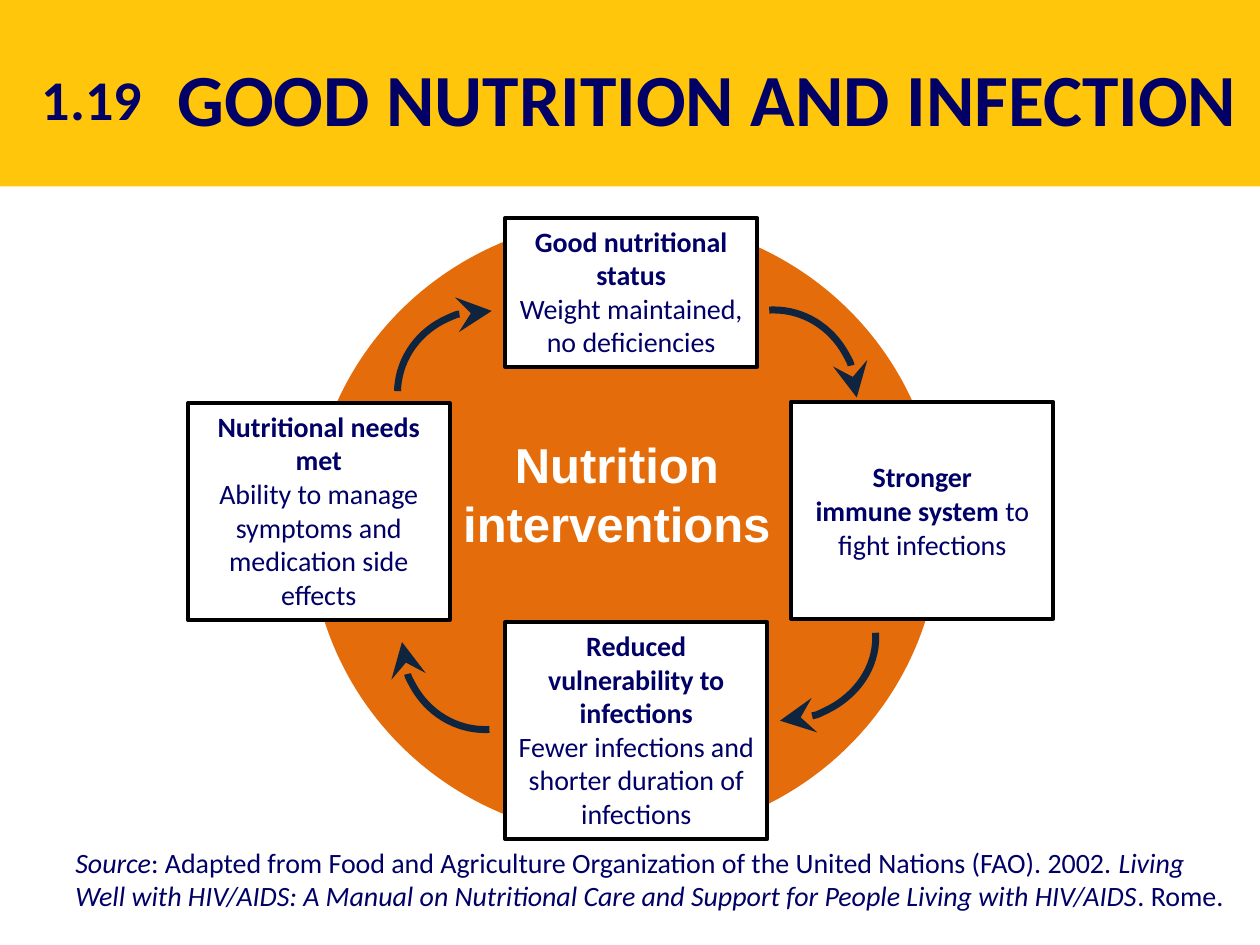
from lxml.etree import SubElement
from pptx import Presentation
from pptx.dml.color import RGBColor
from pptx.enum.shapes import MSO_SHAPE as Shape
from pptx.enum.text import MSO_ANCHOR as Anchor, PP_ALIGN as Align
from pptx.oxml.ns import qn
from pptx.util import Inches, Pt

# The slide is a grid of 100 columns by 75 rows
COLUMNS, ROWS = 100, 75
CELL = Inches(0.1)

NAVY, INK, BLACK, WHITE = "000066", "0F243E", "000000", "FFFFFF"
YELLOW, ORANGE = "FFC60B", "E46C0A"

# Place, anchor and (bold, plain) paragraphs of each stage in the cycle
STAGES = [
    ((40.1, 17.3, 20, 11.8), Anchor.TOP,
     [[("Good nutritional status", "b")],
      [("Weight maintained, no deficiencies", "")]]),
    ((40.1, 49.4, 20.8, 17.2), Anchor.TOP,
     [[("Reduced vulnerability to infections", "b")],
      [("Fewer infections and shorter duration of infections", "")]]),
    ((14.9, 32, 20.8, 17.2), Anchor.TOP,
     [[("Nutritional needs met", "b")],
      [("Ability to manage symptoms and medication side effects", "")]]),
    ((62.8, 31.9, 20.8, 17.2), Anchor.MIDDLE,
     [[("Stronger\vimmune system ", "b"), ("to fight infections", "")]]),
]

# Place and rotation of each arc
ARROWS = [
    ((54.8, 24.6, 13.2, 13.9), 0),
    ((31.9, 24.3, 13.2, 13.9), 274.6),
    ((31.9, 44, 13.2, 13.9), 180),
    ((55.3, 43, 13.2, 15.2), 90),
]

SOURCE = [
    ("Source", "i"),
    (": Adapted from Food and Agriculture Organization of the United Nations "
     "(FAO). 2002. ", ""),
    ("Living Well with HIV/AIDS: A Manual on Nutritional Care and Support for "
     "People Living with HIV/AIDS", "i"),
    (". Rome.", ""),
]


def color(hex_text):
    return RGBColor.from_string(hex_text)


def grid(place):
    return [round(cells * CELL) for cells in place]


def add_figure(page, kind, place, fill=None, line=None, width=0):
    figure = page.shapes.add_shape(kind, *grid(place))
    figure.shadow.inherit = False
    if fill:
        figure.fill.solid()
        figure.fill.fore_color.rgb = color(fill)
    else:
        figure.fill.background()
    if line:
        figure.line.color.rgb = color(line)
        figure.line.width = Pt(width)
    else:
        figure.line.fill.background()
    return figure


def write(box, paragraphs, size, align=Align.CENTER, ink=NAVY, face="Calibri",
          anchor=Anchor.TOP, wrap=True):
    """Fill a box with paragraphs of (text, style) spans; style is b, i or empty."""
    frame = box.text_frame
    frame.word_wrap = wrap
    frame.vertical_anchor = anchor
    for index, spans in enumerate(paragraphs):
        para = frame.add_paragraph() if index else frame.paragraphs[0]
        para.text = "".join(text for text, _ in spans) if len(spans) == 1 else ""
        para.alignment = align
        if len(spans) > 1:
            for text, style in spans:
                add_span(para, text, style)
        else:
            set_style(para.runs[0], spans[0][1])
        for span in para.runs:
            span.font.size = Pt(size)
            span.font.name = face
            span.font.color.rgb = color(ink)


def set_style(span, style):
    span.font.bold = style == "b"
    span.font.italic = style == "i"


def add_span(para, text, style):
    for index, part in enumerate(text.split("\v")):
        if index:
            para.add_line_break()
        span = para.add_run()
        span.text = part
        set_style(span, style)


def add_label(page, place, spans, size, **options):
    box = page.shapes.add_textbox(*grid(place))
    write(box, [spans], size, **options)
    return box


def add_stage(page, place, anchor, paragraphs):
    box = add_figure(page, Shape.RECTANGLE, place, WHITE, BLACK, 2.25)
    write(box, paragraphs, 16, anchor=anchor)


def add_arrow(page, place, rotation):
    arc = add_figure(page, Shape.ARC, place, line=INK, width=4)
    arc.adjustments[0] = 160.29
    arc.rotation = rotation
    SubElement(arc.line._get_or_add_ln(), qn("a:tailEnd"),
               type="stealth", w="lg", len="lg")


def main():
    deck = Presentation()
    deck.slide_width, deck.slide_height = COLUMNS * CELL, ROWS * CELL
    page = deck.slides.add_slide(deck.slide_layouts[6])

    # Title band
    add_figure(page, Shape.RECTANGLE, (0, 0, COLUMNS, 14.8), YELLOW)
    add_label(page, (13.1, 3.7, 86.1, 6), [("GOOD NUTRITION AND INFECTION", "b")],
              42, align=Align.LEFT)
    add_label(page, (2.3, 4.6, 10, 6.4), [("1.19", "b")], 32, wrap=False)

    # Cycle of stages around the circle
    add_figure(page, Shape.OVAL, (24.6, 17.3, 50, 49.2), ORANGE)
    for stage in STAGES:
        add_stage(page, *stage)
    add_label(page, (35.2, 34, 27.5, 10.4), [("Nutrition interventions", "b")],
              28, ink=WHITE, face="Arial")
    for arrow in ARROWS:
        add_arrow(page, *arrow)

    # Source line
    source = add_label(page, (0, 66.6, 99.2, 6.4), SOURCE, 16, align=Align.LEFT)
    properties = source.text_frame.paragraphs[0]._p.get_or_add_pPr()
    properties.set("marL", str(5 * CELL))
    properties.set("indent", "0")

    deck.save("out.pptx")


if __name__ == "__main__":
    main()
